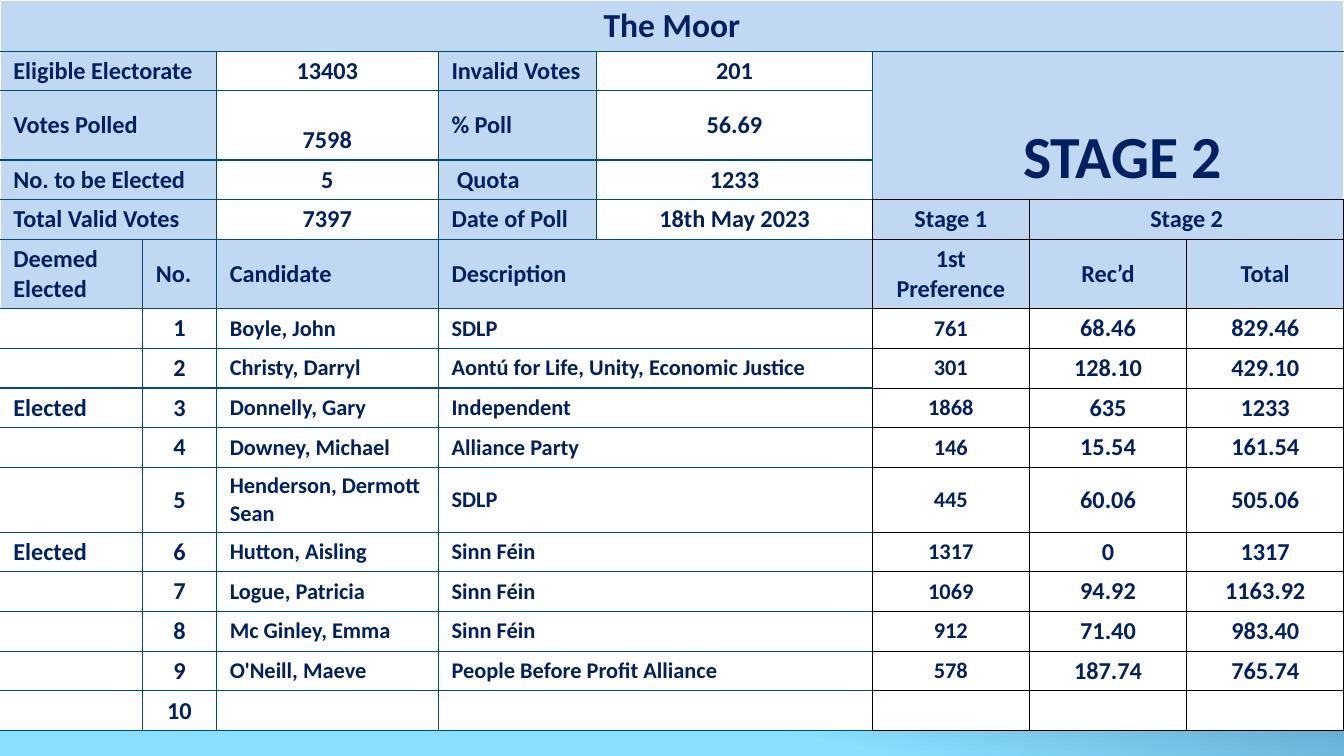
from dataclasses import dataclass

import lxml.etree
import pptx
import pptx.dml.color
import pptx.enum.text
import pptx.oxml.ns
import pptx.table
import pptx.util

RGBColor = pptx.dml.color.RGBColor
Inches = pptx.util.Inches
Pt = pptx.util.Pt
Anchor = pptx.enum.text.MSO_ANCHOR
qn = pptx.oxml.ns.qn

NAVY = RGBColor(0x00, 0x20, 0x60)
TEAL = RGBColor(0x00, 0x4E, 0x6C)
PALE_BLUE = RGBColor(0xC1, 0xD8, 0xF2)
WHITE = RGBColor(0xFF, 0xFF, 0xFF)
BLACK = RGBColor(0x00, 0x00, 0x00)
DEEP_BLUE = RGBColor(0x0D, 0x38, 0x68)
SKY_BLUE = RGBColor(0x8A, 0xDF, 0xFF)
LINE_WIDTHS = {WHITE: 1, TEAL: 0.75, BLACK: 0.5}

SLIDE_WIDTH = Inches(10)
SLIDE_HEIGHT = SLIDE_WIDTH * 9 // 16
COLUMN_WIDTHS = [1.06, 0.55, 1.65, 1.18, 2.05, 1.17, 1.17, 1.17]
ROW_HEIGHTS = [0.37] + [0.28] * 4 + [0.48] + [0.28] * 10
CELL_PADDING = Inches(0.3) // 8
STAGE_COLUMN = 5
FIRST_CANDIDATE_ROW = 6


@dataclass
class Entry:
    row: int
    col: int
    text: str
    fill: RGBColor = WHITE
    size: float = 13
    centred: bool = False
    rows: int = 1
    cols: int = 1
    left: float = 0.1
    extra_top: float = 0
    anchor: Anchor = Anchor.MIDDLE


@dataclass
class Summary:
    label: str
    value: str
    second_label: str
    second_value: str


@dataclass
class Candidate:
    name: str
    party: str
    first_preference: str
    received: str
    total: str
    status: str = ""


SUMMARIES = [
    Summary("Eligible Electorate", "13403", "Invalid Votes", "201"),
    Summary("Votes Polled", "7598", "% Poll", "56.69"),
    Summary("No. to be Elected", "5", "Quota", "1233"),
    Summary("Total Valid Votes", "7397", "Date of Poll", "18th May 2023"),
]

CANDIDATES = [
    Candidate("Boyle, John", "SDLP", "761", "68.46", "829.46"),
    Candidate("Christy, Darryl", "Aontú for Life, Unity, Economic Justice",
              "301", "128.10", "429.10"),
    Candidate("Donnelly, Gary", "Independent", "1868", "635", "1233", "Elected"),
    Candidate("Downey, Michael", "Alliance Party", "146", "15.54", "161.54"),
    Candidate("Henderson, Dermott Sean", "SDLP", "445", "60.06", "505.06"),
    Candidate("Hutton, Aisling", "Sinn Féin", "1317", "0", "1317", "Elected"),
    Candidate("Logue, Patricia", "Sinn Féin", "1069", "94.92", "1163.92"),
    Candidate("Mc Ginley, Emma", "Sinn Féin", "912", "71.40", "983.40"),
    Candidate("O'Neill, Maeve", "People Before Profit Alliance",
              "578", "187.74", "765.74"),
    Candidate("", "", "", "", ""),
]


def border_colours(entry: Entry) -> dict[str, RGBColor]:
    """Colour of each side, following the entry's place in the table."""
    if entry.row == 0:
        return {"L": WHITE, "R": WHITE, "T": WHITE, "B": TEAL}
    if entry.rows > 1:
        return {"L": TEAL, "R": WHITE, "T": TEAL, "B": BLACK}
    if entry.col >= STAGE_COLUMN:
        return dict.fromkeys("LRTB", BLACK)
    meets_stages = entry.col + entry.cols == STAGE_COLUMN and entry.row >= 4
    return {"L": TEAL if entry.col else WHITE,
            "R": BLACK if meets_stages else TEAL, "T": TEAL, "B": TEAL}


def style_cell(cell: pptx.table._Cell, entry: Entry) -> None:
    properties = cell._tc.get_or_add_tcPr()
    for position, (side, colour) in enumerate(border_colours(entry).items()):
        line = lxml.etree.Element(qn(f"a:ln{side}"),
                                  w=str(Pt(LINE_WIDTHS[colour])))
        paint = lxml.etree.SubElement(line, qn("a:solidFill"))
        lxml.etree.SubElement(paint, qn("a:srgbClr"), val=str(colour))
        properties.insert(position, line)
    cell.fill.solid()
    cell.fill.fore_color.rgb = entry.fill


def draw_entry(table: pptx.table.Table, entry: Entry) -> None:
    last_row, last_col = entry.row + entry.rows, entry.col + entry.cols
    for row in range(entry.row, last_row):
        for col in range(entry.col, last_col):
            style_cell(table.cell(row, col), entry)
    cell = table.cell(entry.row, entry.col)
    if entry.rows * entry.cols > 1:
        cell.merge(table.cell(last_row - 1, last_col - 1))
    cell.margin_left, cell.margin_right = Inches(entry.left), Inches(0.1)
    cell.margin_top = CELL_PADDING + Inches(entry.extra_top)
    cell.margin_bottom = CELL_PADDING
    cell.vertical_anchor = entry.anchor
    cell.text = entry.text
    paragraph = cell.text_frame.paragraphs[0]
    if entry.centred:
        paragraph.alignment = pptx.enum.text.PP_ALIGN.CENTER
    font = paragraph.font
    font.name, font.size, font.bold = "Calibri", Pt(entry.size), True
    font.color.rgb = NAVY
    if not entry.text:
        # Keeps an empty cell from stretching its row
        lxml.etree.SubElement(paragraph._p, qn("a:endParaRPr"),
                              sz=str(int(entry.size * 100)))


def heading_entries() -> list[Entry]:
    entries = [
        Entry(0, 0, "The Moor", PALE_BLUE, 18, True, cols=8),
        Entry(1, 5, "STAGE 2", PALE_BLUE, 32, True, rows=3, cols=3,
              left=0.32, anchor=Anchor.BOTTOM),
        Entry(4, 5, "Stage 1", PALE_BLUE, centred=True),
        Entry(4, 6, "Stage 2", PALE_BLUE, centred=True, cols=2),
    ]
    for row, item in enumerate(SUMMARIES, start=1):
        entries += [
            Entry(row, 0, item.label, PALE_BLUE, cols=2),
            Entry(row, 2, item.value, centred=True,
                  extra_top=0.22 if item.label == "Votes Polled" else 0),
            Entry(row, 3, item.second_label, PALE_BLUE,
                  left=0.14 if item.second_label == "Quota" else 0.1),
            Entry(row, 4, item.second_value, centred=True),
        ]
    headers = {0: "Deemed Elected", 1: "No.", 2: "Candidate", 3: "Description",
               5: "1st Preference", 6: "Rec’d", 7: "Total"}
    for col, header in headers.items():
        entries.append(Entry(5, col, header, PALE_BLUE, cols=2 if col == 3 else 1,
                             centred=col >= STAGE_COLUMN))
    return entries


def candidate_entries(number: int, person: Candidate) -> list[Entry]:
    row = FIRST_CANDIDATE_ROW + number - 1
    return [
        Entry(row, 0, person.status),
        Entry(row, 1, str(number), centred=True),
        Entry(row, 2, person.name, size=12),
        Entry(row, 3, person.party, size=12, cols=2),
        Entry(row, 5, person.first_preference, size=12, centred=True),
        Entry(row, 6, person.received, centred=True),
        Entry(row, 7, person.total, centred=True),
    ]


def main() -> None:
    presentation = pptx.Presentation()
    presentation.slide_width = SLIDE_WIDTH
    presentation.slide_height = SLIDE_HEIGHT
    slide = presentation.slides.add_slide(presentation.slide_layouts[6])

    # Background gradient
    backdrop = slide.background.fill
    backdrop.gradient()
    backdrop.gradient_angle = 360 - 102
    for stop, (position, colour) in zip(
            backdrop.gradient_stops, [(0.42, DEEP_BLUE), (0.82, SKY_BLUE)]):
        stop.position, stop.color.rgb = position, colour

    # Results table
    results = slide.shapes.add_table(len(ROW_HEIGHTS), len(COLUMN_WIDTHS),
                                     0, 0, SLIDE_WIDTH, Inches(5.37))
    table = results.table
    table.first_row = table.horz_banding = False
    for column, width in zip(table.columns, COLUMN_WIDTHS):
        column.width = Inches(width)
    for row, height in zip(table.rows, ROW_HEIGHTS):
        row.height = Inches(height)
    results.height = Inches(5.37)

    # Headings, then one row per candidate
    entries = heading_entries()
    for number, person in enumerate(CANDIDATES, start=1):
        entries += candidate_entries(number, person)
    for entry in entries:
        draw_entry(table, entry)

    presentation.save("out.pptx")


if __name__ == "__main__":
    main()
